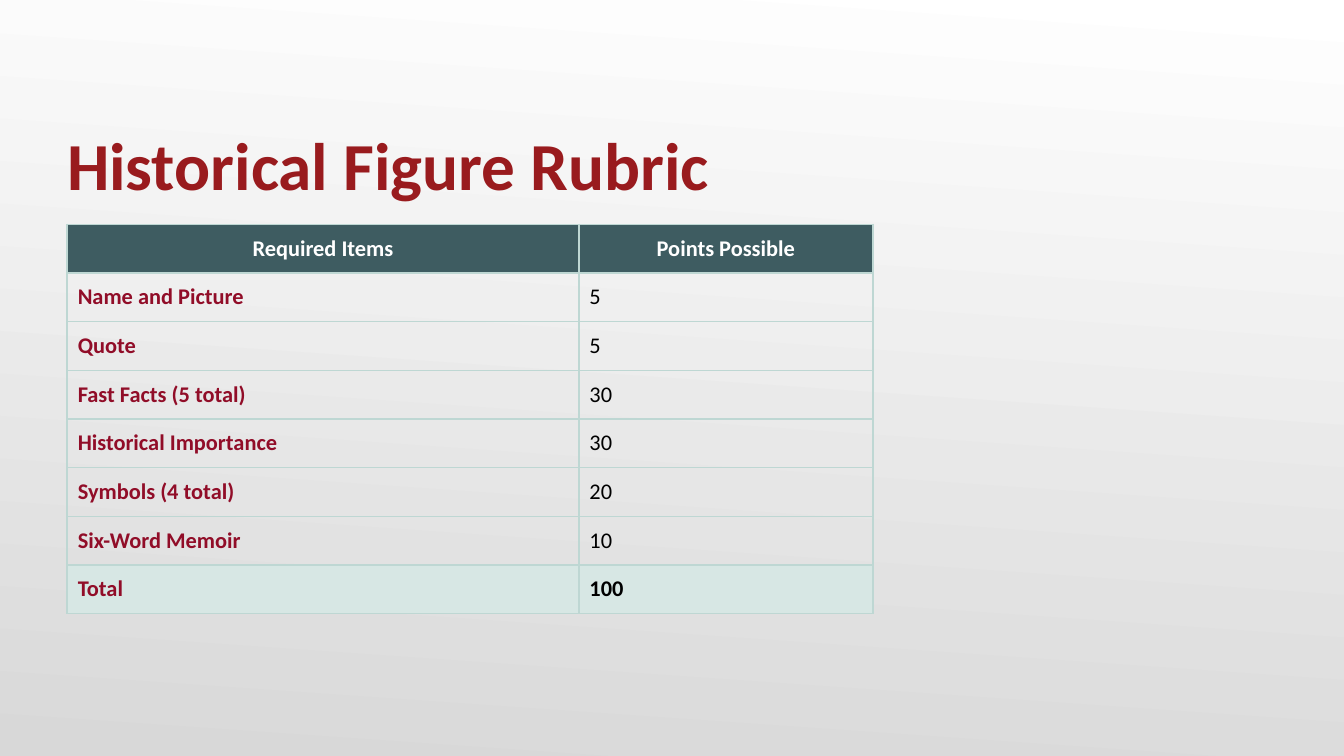
"""Build the historical figure rubric slide."""
from dataclasses import dataclass
from typing import Optional

from lxml.etree import SubElement
from pptx import Presentation
from pptx.dml.color import RGBColor
from pptx.enum.text import MSO_ANCHOR, PP_ALIGN
from pptx.oxml.ns import qn
from pptx.util import Cm, Pt

COLOURS = {
    "title": "991B1E",
    "label": "910D28",
    "header": "3E5C61",
    "total": "D7E7E4",
    "border": "BED7D3",
    "white": "FFFFFF",
    "black": "000000",
    "grey": "D8D8D8",
}
COLUMN_WIDTHS = (9.67, 5.56)
ROW_HEIGHT = 0.92
LEFT = 1.27
CELL_MARGIN = Cm(0.2)


@dataclass
class RubricRow:
    item: str
    points: str
    item_colour: str = "label"
    points_colour: str = "black"
    points_bold: bool = False
    fill: Optional[str] = None
    alignment: PP_ALIGN = PP_ALIGN.LEFT


ROWS = [
    RubricRow("Required Items", "Points Possible", "white", "white", True, "header", PP_ALIGN.CENTER),
    RubricRow("Name and Picture", "5"),
    RubricRow("Quote", "5"),
    RubricRow("Fast Facts (5 total)", "30"),
    RubricRow("Historical Importance", "30"),
    RubricRow("Symbols (4 total)", "20"),
    RubricRow("Six-Word Memoir", "10"),
    RubricRow("Total", "100", points_bold=True, fill="total"),
]


def colour(name: str) -> RGBColor:
    return RGBColor.from_string(COLOURS[name])


def apply_format(target, values: dict) -> None:
    for name, value in values.items():
        setattr(target, name, value)


def write_text(paragraph, text: str, size: int, colour_name: str, bold: bool) -> None:
    run = paragraph.add_run()
    run.text = text
    apply_format(run.font, {"name": "Calibri", "size": Pt(size), "bold": bold})
    run.font.color.rgb = colour(colour_name)


def add_borders(cell) -> None:
    properties = cell._tc.get_or_add_tcPr()
    for side in ("a:lnL", "a:lnR", "a:lnT", "a:lnB"):
        line = SubElement(properties, qn(side), w=str(Pt(1)))
        fill = SubElement(line, qn("a:solidFill"))
        SubElement(fill, qn("a:srgbClr"), val=COLOURS["border"])


def draw_cell(cell, row: RubricRow, text: str, colour_name: str, bold: bool) -> None:
    margins = ("margin_left", "margin_top", "margin_right", "margin_bottom")
    apply_format(cell, dict.fromkeys(margins, CELL_MARGIN))
    paragraph = cell.text_frame.paragraphs[0]
    paragraph.alignment = row.alignment
    write_text(paragraph, text, 12, colour_name, bold)
    add_borders(cell)
    if row.fill:
        cell.fill.solid()
        cell.fill.fore_color.rgb = colour(row.fill)
    else:
        cell.fill.background()


def draw_background(slide) -> None:
    fill = slide.background.fill
    fill.gradient()
    fill.gradient_angle = 266
    for stop, name in zip(fill.gradient_stops, ("white", "grey")):
        stop.color.rgb = colour(name)


def draw_title(slide) -> None:
    text_frame = slide.shapes.add_textbox(Cm(LEFT), Cm(1.47), Cm(22.86), Cm(2.39)).text_frame
    apply_format(text_frame, {
        "word_wrap": True,
        "vertical_anchor": MSO_ANCHOR.BOTTOM,
        "margin_left": 0,
        "margin_top": Cm(0.13),
        "margin_right": 0,
        "margin_bottom": 0,
    })
    write_text(text_frame.paragraphs[0], "Historical Figure Rubric", 36, "title", True)


def draw_rubric(slide) -> None:
    table = slide.shapes.add_table(
        len(ROWS), len(COLUMN_WIDTHS), Cm(LEFT), Cm(4.24),
        Cm(sum(COLUMN_WIDTHS)), Cm(ROW_HEIGHT * len(ROWS)),
    ).table
    apply_format(table, {"first_row": False, "horz_banding": False})
    for column, width in zip(table.columns, COLUMN_WIDTHS):
        column.width = Cm(width)
    for index, row in enumerate(ROWS):
        table.rows[index].height = Cm(ROW_HEIGHT)
        draw_cell(table.cell(index, 0), row, row.item, row.item_colour, True)
        draw_cell(table.cell(index, 1), row, row.points, row.points_colour, row.points_bold)


def main() -> None:
    presentation = Presentation()
    apply_format(presentation, {"slide_width": Cm(25.4), "slide_height": Cm(14.29)})
    slide = presentation.slides.add_slide(presentation.slide_layouts[6])
    draw_background(slide)
    draw_title(slide)
    draw_rubric(slide)
    presentation.save("out.pptx")


if __name__ == "__main__":
    main()
